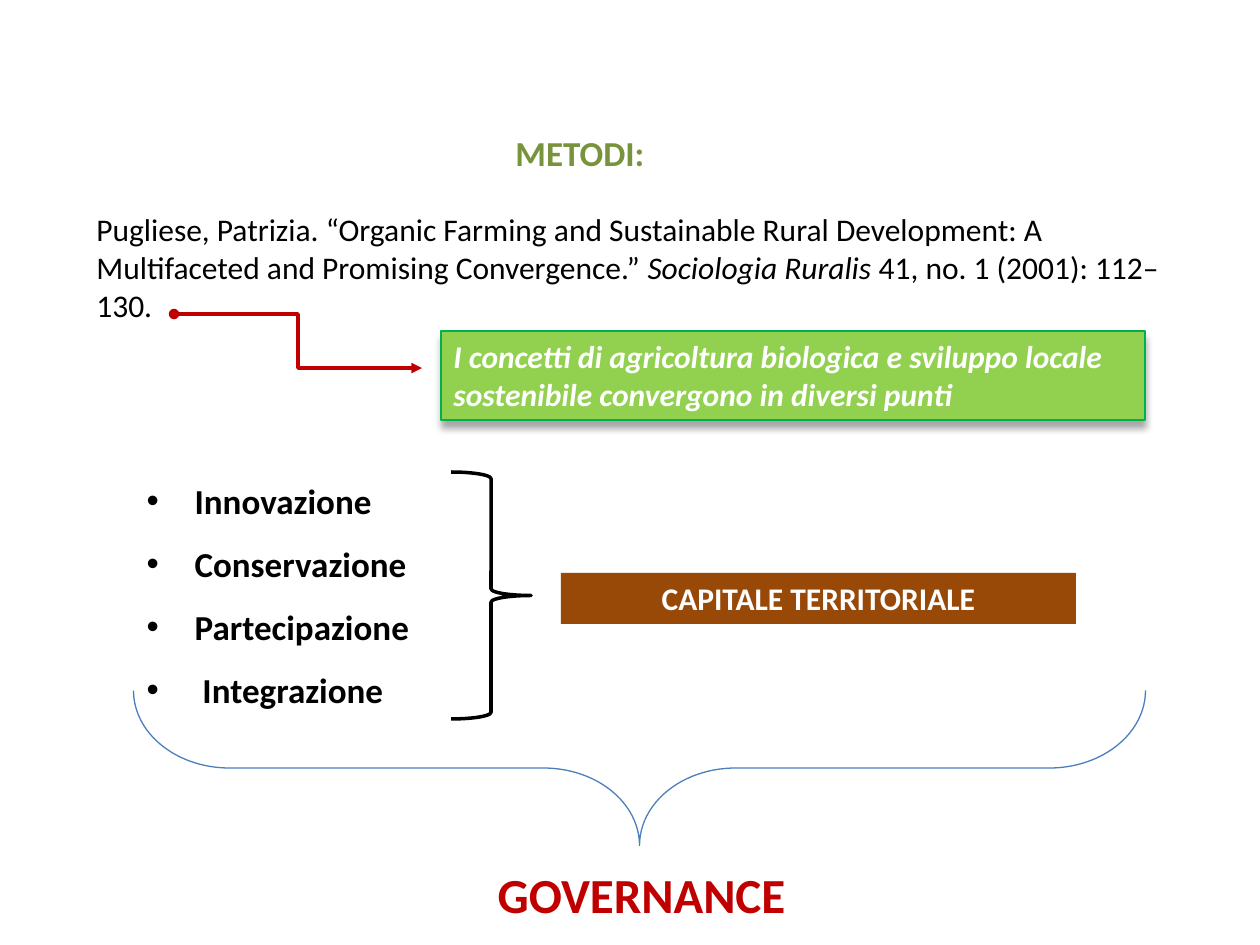
from dataclasses import dataclass
from typing import Optional

from lxml.etree import SubElement
from pptx import Presentation
from pptx.dml.color import RGBColor
from pptx.enum.shapes import MSO_CONNECTOR, MSO_SHAPE
from pptx.enum.text import MSO_ANCHOR, MSO_AUTO_SIZE, PP_ALIGN
from pptx.oxml.ns import qn
from pptx.util import Emu, Inches, Pt

PX_PER_INCH = 126
FONT = "Calibri"
COLORS = {
    "olive": "77933C", "black": "000000", "white": "FFFFFF", "red": "C00000",
    "lime": "92D050", "green": "00B050", "brown": "984807", "blue": "4B7EBC",
    "shadow": "A6A6A6",
}


@dataclass(frozen=True)
class Box:
    x: int
    y: int
    w: int
    h: int


@dataclass(frozen=True)
class Style:
    size: int
    color: str
    bold: bool = True
    italic: bool = False
    align: PP_ALIGN = PP_ALIGN.LEFT


@dataclass(frozen=True)
class Brace:
    kind: MSO_SHAPE
    box: Box
    color: str
    width: float
    rotation: int = 0
    curve: Optional[float] = None


def px(n: int) -> Emu:
    return Emu(round(n * Inches(1) / PX_PER_INCH))


def frame(box: Box) -> tuple:
    return px(box.x), px(box.y), px(box.w), px(box.h)


def rgb(name: str) -> RGBColor:
    return RGBColor.from_string(COLORS[name])


def place(s, box: Box) -> None:
    s.left, s.top, s.width, s.height = frame(box)


def style_paragraph(p, style: Style) -> None:
    p.alignment = style.align
    p.space_before = Pt(0)
    f = p.font
    f.name, f.size, f.bold, f.italic = FONT, Pt(style.size), style.bold, style.italic
    f.color.rgb = rgb(style.color)


def write(s, lines: list, style: Style) -> None:
    """Fill a shape with paragraphs; each line is a list of (text, italic) runs."""
    tf = s.text_frame
    tf.word_wrap = True
    tf.auto_size = MSO_AUTO_SIZE.NONE
    tf.vertical_anchor = MSO_ANCHOR.TOP
    for i, runs in enumerate(lines):
        p = tf.add_paragraph() if i else tf.paragraphs[0]
        for text, italic in runs:
            r = p.add_run()
            r.text = text
            if italic:
                r.font.italic = True
        style_paragraph(p, style)


def add_text(slide, box: Box, runs: list, style: Style) -> None:
    write(slide.shapes.add_textbox(*frame(box)), [runs], style)


def add_panel(slide, box: Box, text: str, fill: str, style: Style, line: Optional[str] = None):
    s = slide.shapes.add_shape(MSO_SHAPE.RECTANGLE, *frame(box))
    s.shadow.inherit = False
    s.fill.solid()
    s.fill.fore_color.rgb = rgb(fill)
    if line:
        s.line.color.rgb = rgb(line)
        s.line.width = Pt(0.75)
    else:
        s.line.fill.background()
    write(s, [[(text, False)]], style)
    return s


def add_drop_shadow(s, color: str) -> None:
    effects = s._element.spPr.find(qn("a:effectLst"))
    shadow = SubElement(effects, qn("a:outerShdw"), blurRad=str(Pt(4)), dist=str(Pt(4)),
                        dir="5400000", rotWithShape="0")
    SubElement(shadow, qn("a:srgbClr"), val=COLORS[color])


def add_brace(slide, brace: Brace) -> None:
    s = slide.shapes.add_shape(brace.kind, *frame(brace.box))
    s.shadow.inherit = False
    s.fill.background()
    s.line.color.rgb = rgb(brace.color)
    s.line.width = Pt(brace.width)
    s.rotation = brace.rotation
    if brace.curve is not None:
        s.adjustments[0] = brace.curve


def add_elbow_arrow(slide, start: tuple, end: tuple, color: str) -> None:
    s = slide.shapes.add_connector(MSO_CONNECTOR.ELBOW, *map(px, start + end))
    s.line.color.rgb = rgb(color)
    s.line.width = Pt(2)
    ln = s.line._get_or_add_ln()
    SubElement(ln, qn("a:headEnd"), type="oval")
    SubElement(ln, qn("a:tailEnd"), type="triangle")
    SubElement(s._element.spPr, qn("a:effectLst"))


def add_bullets(s, box: Box, items: list, style: Style) -> None:
    place(s, box)
    write(s, [[(item, False)] for item in items], style)
    for p in s.text_frame.paragraphs:
        p.line_spacing = 1.5
        pPr = p._p.get_or_add_pPr()
        pPr.set("marL", str(px(48)))
        pPr.set("indent", str(-px(48)))


def main() -> None:
    prs = Presentation()
    prs.slide_width, prs.slide_height = Inches(10), Inches(7.5)
    slide = prs.slides.add_slide(prs.slide_layouts[1])
    title, body = slide.placeholders

    # Heading and reference
    place(title, Box(84, 125, 992, 55))
    write(title, [[("METODI:", False)]], Style(20, "olive", align=PP_ALIGN.CENTER))
    add_text(slide, Box(84, 204, 1091, 127), [
        ("Pugliese, Patrizia. “Organic Farming and Sustainable Rural Development: "
         "A Multifaceted and Promising Convergence.” ", False),
        ("Sociologia Ruralis", True),
        (" 41, no. 1 (2001): 112–130.", False),
    ], Style(18, "black", bold=False))

    # Key finding
    add_elbow_arrow(slide, (174, 314), (422, 368), "red")
    finding = add_panel(
        slide, Box(441, 331, 704, 89),
        "I concetti di agricoltura biologica e sviluppo locale sostenibile "
        "convergono in diversi punti",
        "lime", Style(18, "white", italic=True), line="green")
    add_drop_shadow(finding, "shadow")

    # Factors that form the territorial capital
    add_bullets(body, Box(134, 452, 605, 267),
                ["Innovazione", "Conservazione", "Partecipazione", " Integrazione"],
                Style(20, "black"))
    add_panel(slide, Box(561, 573, 515, 51), "CAPITALE TERRITORIALE", "brown",
              Style(18, "white", align=PP_ALIGN.CENTER))

    # Braces leading to the outcome
    for brace in (
        Brace(MSO_SHAPE.RIGHT_BRACE, Box(451, 472, 80, 247), "black", 2),
        Brace(MSO_SHAPE.LEFT_BRACE, Box(562, 262, 155, 1012), "blue", 0.75, 270, 0.62),
    ):
        add_brace(slide, brace)
    add_text(slide, Box(190, 858, 903, 72), [("GOVERNANCE", False)],
             Style(28, "red", align=PP_ALIGN.CENTER))

    prs.save("out.pptx")


if __name__ == "__main__":
    main()
